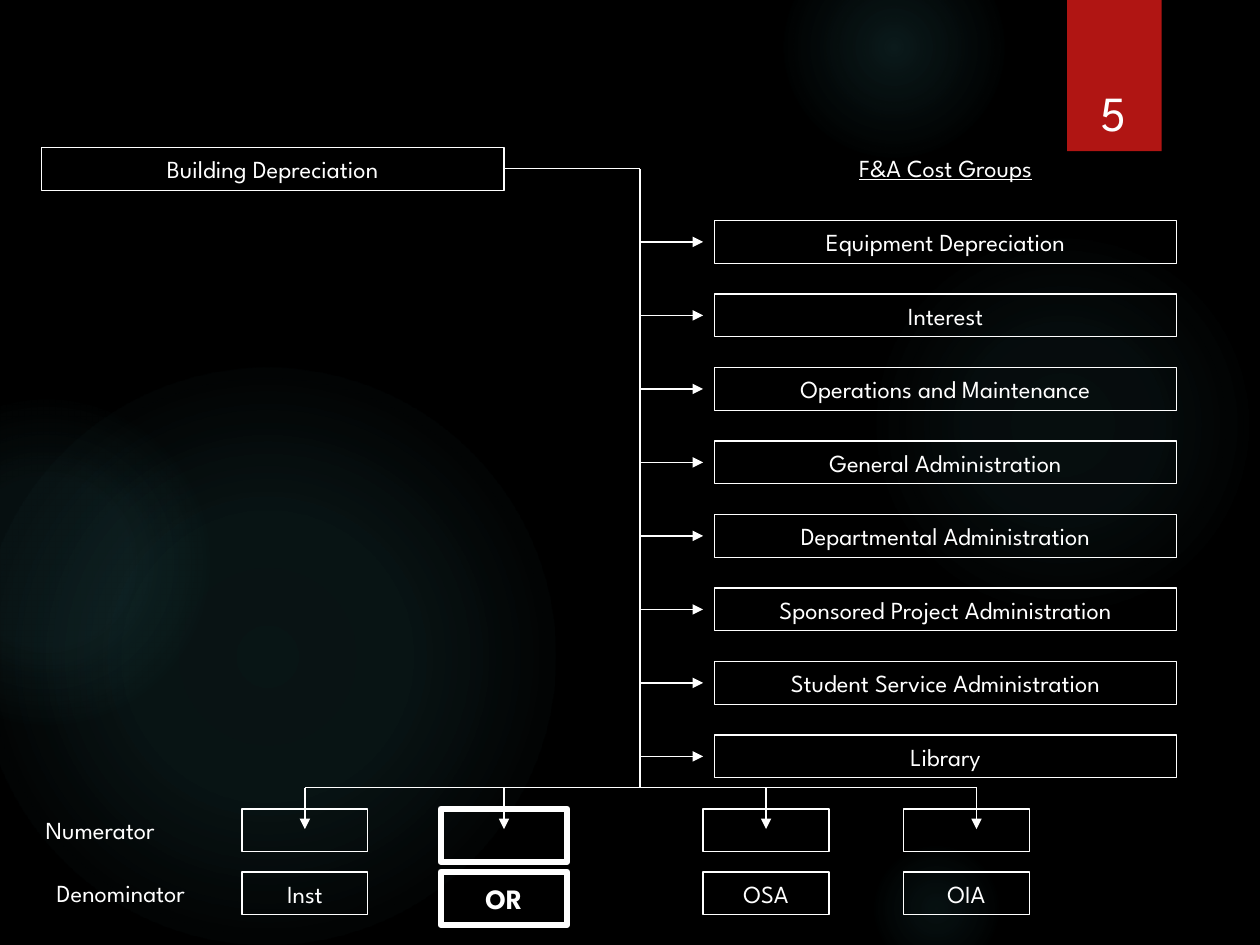
from lxml import etree
from pptx import Presentation
from pptx.dml.color import RGBColor
from pptx.enum.shapes import MSO_CONNECTOR, MSO_SHAPE
from pptx.enum.text import MSO_ANCHOR, PP_ALIGN
from pptx.oxml import parse_xml
from pptx.oxml.ns import nsdecls, qn
from pptx.util import Inches, Pt

COLORS = {"background": "000000", "ink": "FFFFFF", "glow": "50B9C1", "tab": "B01513"}
FONT = "League Spartan"
GLOWS = [
    (6.89, 1.83, 3.08, (7, 6), 69),
    (6.22, -0.5, 1.75, (14, 7), 73),
    (6.89, 6.67, 1.08, (9, 5), 66),
    (-0.17, 2.92, 4.58, (11, 10), 75),
    (-0.92, 3.17, 2.58, (8, 8), 72),
]
COST_GROUPS = [
    "Equipment Depreciation", "Interest", "Operations and Maintenance",
    "General Administration", "Departmental Administration",
    "Sponsored Project Administration", "Student Service Administration", "Library",
]
BASES = [("Inst", 1.92, 2.42), ("OR", 3.5, 4), ("OSA", 5.58, 6.08), ("OIA", 7.17, 7.75)]
GROUP_LEFT, GROUP_WIDTH, BOX_HEIGHT = 5.67, 3.67, 0.34
GROUP_TOP, GROUP_PITCH = 1.75, 7 / 12
TRUNK_X, TRUNK_TOP, BRANCH_Y = 5.08, 1.34, 6.25


class SlideBuilder:
    """Holds the style and the current slide."""

    def __init__(self, s):
        self.s = s

    def color(self, name):
        return RGBColor.from_string(COLORS[name])

    def background(self):
        fill = self.s.background.fill
        fill.solid()
        fill.fore_color.rgb = self.color("background")

    def shape(self, kind, x, y, w, h):
        sp = self.s.shapes.add_shape(kind, Inches(x), Inches(y), Inches(w), Inches(h))
        sp.shadow.inherit = False
        sp.fill.background()
        sp.line.fill.background()
        return sp

    def glow(self, x, y, size, alphas, edge):
        sp = self.shape(MSO_SHAPE.OVAL, x, y, size, size)
        stops = "".join(
            f'<a:gs pos="{pos * 1000}"><a:srgbClr val="{COLORS["glow"]}">'
            f'<a:alpha val="{alpha * 1000}"/></a:srgbClr></a:gs>'
            for pos, alpha in zip((0, 36, edge), (*alphas, 0))
        )
        gradient = parse_xml(
            f'<a:gradFill {nsdecls("a")}><a:gsLst>{stops}</a:gsLst><a:path path="circle">'
            '<a:fillToRect l="50000" t="50000" r="50000" b="50000"/></a:path></a:gradFill>'
        )
        props = sp.element.spPr
        props.replace(props.find(qn("a:noFill")), gradient)

    def tab(self, x, y, w, h):
        sp = self.shape(MSO_SHAPE.RECTANGLE, x, y, w, h)
        sp.fill.solid()
        sp.fill.fore_color.rgb = self.color("tab")

    def add_text(self, tf, text, size, bold=False, underline=False, anchor=MSO_ANCHOR.MIDDLE):
        tf.word_wrap = True
        tf.vertical_anchor = anchor
        p = tf.paragraphs[0]
        p.alignment = PP_ALIGN.CENTER
        r = p.add_run()
        r.text = text
        r.font.name = FONT
        r.font.size = Pt(size)
        r.font.bold = bold
        r.font.underline = underline
        r.font.color.rgb = self.color("ink")

    def box(self, x, y, w, text="", heavy=False):
        sp = self.shape(MSO_SHAPE.RECTANGLE, x, y, w, 0.42 if heavy else BOX_HEIGHT)
        sp.line.color.rgb = self.color("ink")
        sp.line.width = Pt(3.75 if heavy else 0.75)
        if text:
            self.add_text(sp.text_frame, text, 16 if heavy else 14, bold=heavy)
        return sp

    def label(self, x, y, w, text, h=0.33, size=14, **style):
        sp = self.s.shapes.add_textbox(Inches(x), Inches(y), Inches(w), Inches(h))
        self.add_text(sp.text_frame, text, size, **style)

    def line(self, x1, y1, x2, y2, arrow=False):
        cx = self.s.shapes.add_connector(
            MSO_CONNECTOR.STRAIGHT, Inches(x1), Inches(y1), Inches(x2), Inches(y2))
        cx.line.color.rgb = self.color("ink")
        cx.line.width = Pt(0.75)
        props = cx.element.spPr
        if arrow:
            etree.SubElement(props.find(qn("a:ln")), qn("a:tailEnd"), type="triangle")
        etree.SubElement(props, qn("a:effectLst"))
        return cx


def main():
    prs = Presentation()
    prs.slide_width, prs.slide_height = Inches(10), Inches(7.5)
    b = SlideBuilder(prs.slides.add_slide(prs.slide_layouts[6]))

    b.background()
    for glow in GLOWS:
        b.glow(*glow)
    b.tab(8.47, 0, 0.75, 1.2)
    b.label(8.49, 0.29, 0.69, "5", h=0.88, size=28, anchor=MSO_ANCHOR.BOTTOM)

    source = b.box(0.33, 1.17, GROUP_WIDTH, "Building Depreciation")
    b.line(4, TRUNK_TOP, TRUNK_X, TRUNK_TOP).begin_connect(source, 3)
    b.line(TRUNK_X, TRUNK_TOP, TRUNK_X, BRANCH_Y)

    b.label(GROUP_LEFT, 1.17, GROUP_WIDTH, "F&A Cost Groups", underline=True)
    for i, name in enumerate(COST_GROUPS):
        y = GROUP_TOP + i * GROUP_PITCH
        b.box(GROUP_LEFT, y, GROUP_WIDTH, name)
        b.line(TRUNK_X, y + 0.17, 5.58, y + 0.17, arrow=True)

    b.line(BASES[0][2], BRANCH_Y, BASES[-1][2], BRANCH_Y)
    for name, x, arrow_x in BASES:
        heavy = name == "OR"
        b.box(x, 6.42, 1, heavy=heavy)
        b.box(x, 6.92, 1, name, heavy)
        b.line(arrow_x, BRANCH_Y, arrow_x, 6.58, arrow=True)
    b.label(0.17, 6.42, 1.25, "Numerator")
    b.label(0.17, 6.92, 1.58, "Denominator")

    prs.save("out.pptx")


if __name__ == "__main__":
    main()
